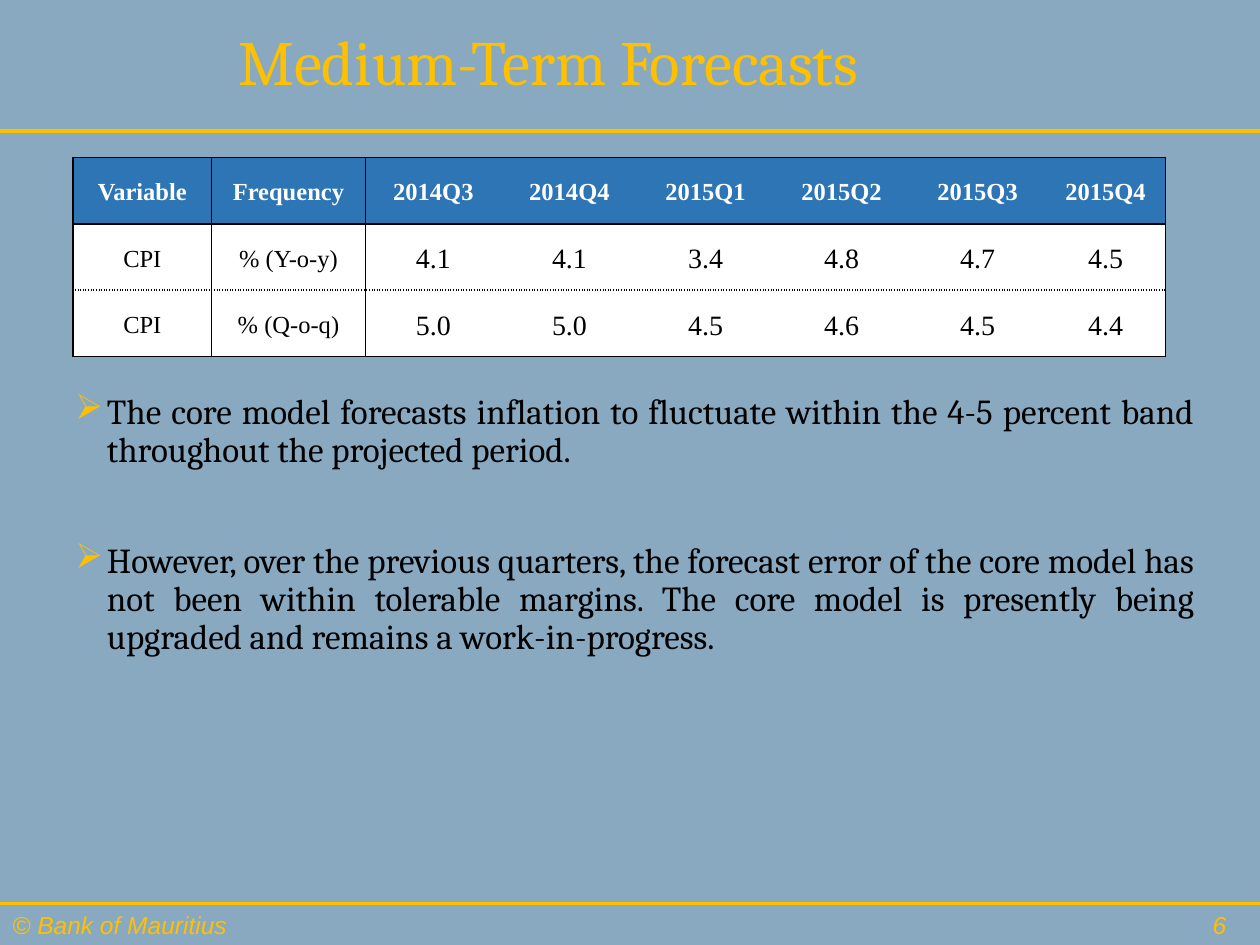
"""Build the medium-term forecasts slide with its CPI table and commentary."""
from dataclasses import dataclass

from lxml import etree
from pptx import Presentation
from pptx.dml.color import RGBColor
from pptx.enum.shapes import MSO_CONNECTOR
from pptx.enum.text import MSO_ANCHOR, PP_ALIGN
from pptx.oxml.ns import qn
from pptx.util import Inches, Pt

STRAIGHT = MSO_CONNECTOR.STRAIGHT
TOP, MIDDLE = MSO_ANCHOR.TOP, MSO_ANCHOR.MIDDLE
LEFT, CENTER, RIGHT, JUSTIFY = PP_ALIGN.LEFT, PP_ALIGN.CENTER, PP_ALIGN.RIGHT, PP_ALIGN.JUSTIFY


@dataclass(frozen=True)
class Theme:
    background: str = "89A9C1"
    accent: str = "FFC000"
    header: str = "2E75B6"
    ink: str = "000000"
    paper: str = "FFFFFF"
    heading_font: str = "Cambria"
    table_font: str = "Times New Roman"
    footer_font: str = "Arial"
    title_size: int = 36
    body_size: int = 20
    value_size: int = 16
    small_size: int = 14


def add_child(parent, tag, **attributes):
    return etree.SubElement(parent, qn(tag), **attributes)


def style_runs(paragraph, font, size, color, bold=False, italic=False):
    for run in paragraph.runs:
        run.font.name, run.font.size = font, Pt(size)
        run.font.bold, run.font.italic = bold, italic
        run.font.color.rgb = RGBColor.from_string(color)


class ForecastSlide:
    def __init__(self, presentation, theme):
        self.theme = theme
        self.slide = presentation.slides.add_slide(presentation.slide_layouts[6])
        fill = self.slide.background.fill
        fill.solid()
        fill.fore_color.rgb = RGBColor.from_string(theme.background)

    def rule(self, y):
        line = self.slide.shapes.add_connector(STRAIGHT, Inches(0), Inches(y), Inches(10), Inches(y))
        line.line.color.rgb = RGBColor.from_string(self.theme.accent)
        line.line.width = Pt(1.75)
        add_child(line._element.spPr, "a:effectLst")

    def text(self, box, content, anchor=TOP):
        frame = self.slide.shapes.add_textbox(*map(Inches, box)).text_frame
        frame.word_wrap = True
        frame.vertical_anchor = anchor
        frame.text = content
        return frame

    def title(self, box, content):
        paragraph = self.text(box, content, MIDDLE).paragraphs[0]
        paragraph.alignment, paragraph.line_spacing = CENTER, 0.9
        style_runs(paragraph, self.theme.heading_font, self.theme.title_size, self.theme.accent)

    def footer(self, box, content, alignment, anchor=TOP):
        paragraph = self.text(box, content, anchor).paragraphs[0]
        paragraph.alignment = alignment
        style_runs(paragraph, self.theme.footer_font, self.theme.small_size,
                   self.theme.accent, italic=True)

    def bullets(self, box, points, gap):
        frame = self.text(box, "\n".join(points))
        for index, paragraph in enumerate(frame.paragraphs):
            properties = paragraph._p.get_or_add_pPr()
            properties.set("marL", str(Inches(0.25)))
            properties.set("indent", str(-Inches(0.25)))
            color = add_child(properties, "a:buClr")
            add_child(color, "a:srgbClr", val=self.theme.accent)
            add_child(properties, "a:buChar", char="➢")
            paragraph.alignment, paragraph.line_spacing = JUSTIFY, 0.9
            paragraph.space_before = Pt(gap if index else 0)
            style_runs(paragraph, self.theme.heading_font, self.theme.body_size, self.theme.ink)

    def border(self, cell, side, dash):
        width = str(Pt(1))
        line = add_child(cell._tc.get_or_add_tcPr(), f"a:ln{side}", w=width)
        if dash is None:
            add_child(line, "a:noFill")
            return
        fill = add_child(line, "a:solidFill")
        add_child(fill, "a:srgbClr", val=self.theme.ink)
        add_child(line, "a:prstDash", val=dash)

    def table(self, box, widths, rows, label_columns):
        theme, last = self.theme, len(widths) - 1
        table = self.slide.shapes.add_table(len(rows), len(widths), *map(Inches, box)).table
        table.first_row = table.horz_banding = False
        for column, width in zip(table.columns, widths):
            column.width = Inches(width)
        for r, values in enumerate(rows):
            for c, value in enumerate(values):
                cell = table.cell(r, c)
                is_header, is_label = r == 0, c < label_columns
                self.border(cell, "L", "solid" if c <= label_columns else None)
                self.border(cell, "R", "solid" if is_label or c == last else None)
                self.border(cell, "T", "sysDot" if r > 1 else "solid")
                self.border(cell, "B", "sysDot" if 0 < r < len(rows) - 1 else "solid")
                cell.fill.solid()
                cell.fill.fore_color.rgb = RGBColor.from_string(
                    theme.header if is_header else theme.paper)
                cell.margin_left = cell.margin_right = Inches(0.07)
                cell.margin_top = cell.margin_bottom = 0
                cell.vertical_anchor = MIDDLE
                cell.text_frame.text = value
                paragraph = cell.text_frame.paragraphs[0]
                paragraph.alignment, paragraph.line_spacing = CENTER, 1.15
                size = theme.small_size if is_header or is_label else theme.value_size
                style_runs(paragraph, theme.table_font, size,
                           theme.paper if is_header else theme.ink, bold=is_header)


def main():
    presentation = Presentation()
    presentation.slide_width, presentation.slide_height = Inches(10), Inches(7.5)
    forecast = ForecastSlide(presentation, Theme())

    for y in (1.04, 7.17):
        forecast.rule(y)
    forecast.footer((0, 7.17, 3.58, 0.34), "© Bank of Mauritius", LEFT)
    forecast.title((0.04, 0, 8.62, 1.04), "Medium-Term Forecasts")
    forecast.bullets((0.5, 3.08, 9.08, 3.83), (
        "The core model forecasts inflation to fluctuate within the 4-5 percent band "
        "throughout the projected period.",
        "However, over the previous quarters, the forecast error of the core model has not been "
        "within tolerable margins. The core model is presently being upgraded and remains a "
        "work-in-progress.",
    ), gap=42)
    forecast.footer((7.58, 7.17, 2.25, 0.34), "6", RIGHT, MIDDLE)
    forecast.table((0.58, 1.25, 8.67, 1.58), [1.1, 1.22] + [1.08] * 5 + [0.95], (
        ("Variable", "Frequency", "2014Q3", "2014Q4", "2015Q1", "2015Q2", "2015Q3", "2015Q4"),
        ("CPI", "% (Y-o-y)", "4.1", "4.1", "3.4", "4.8", "4.7", "4.5"),
        ("CPI", "% (Q-o-q)", "5.0", "5.0", "4.5", "4.6", "4.5", "4.4"),
    ), label_columns=2)

    presentation.save("out.pptx")


if __name__ == "__main__":
    main()
